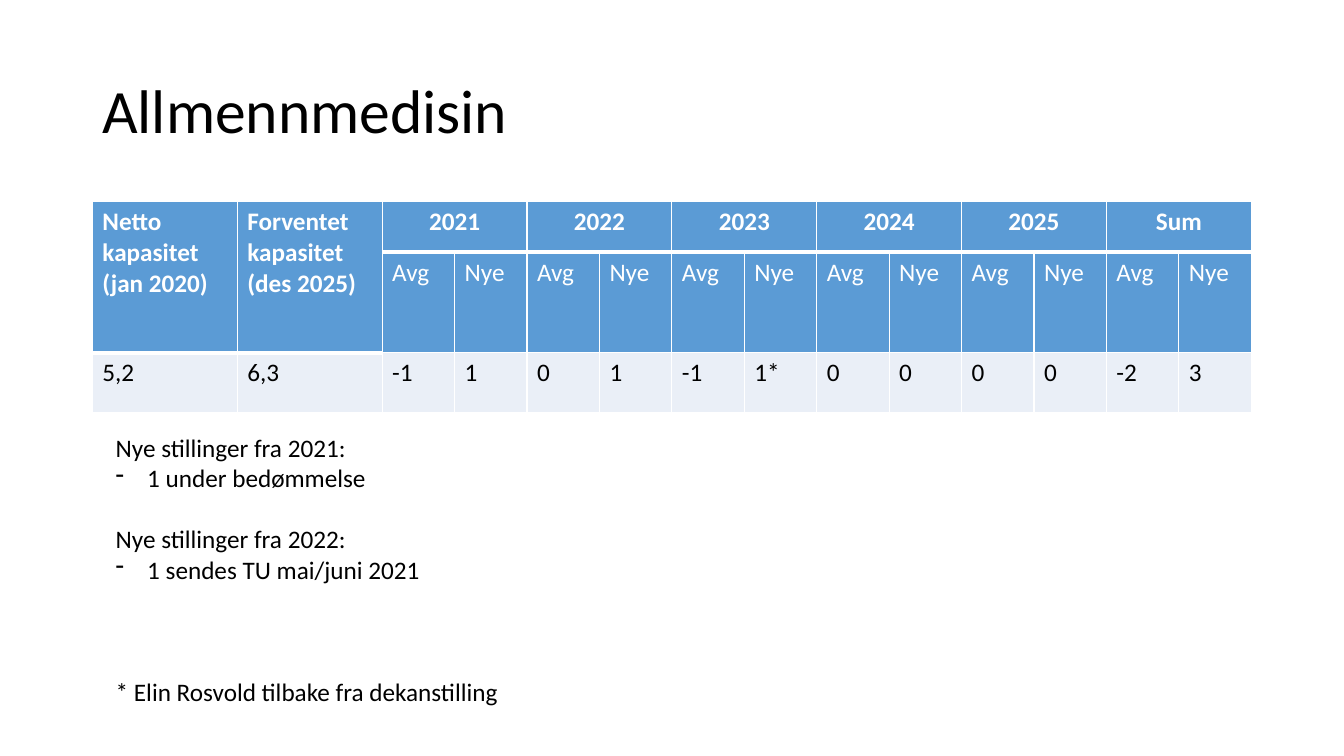
from lxml.etree import SubElement as Sub
from pptx import Presentation
from pptx.dml.color import RGBColor as RGB
from pptx.enum.text import MSO_ANCHOR as Anchor, MSO_AUTO_SIZE as Fit, PP_ALIGN as Align
from pptx.oxml.ns import qn
from pptx.util import Pt

BLUE, PALE, WHITE, BLACK = "5B9BD5", "EAEFF7", "FFFFFF", "000000"
HEADS = ["Netto kapasitet (jan 2020)", "Forventet kapasitet (des 2025)"]
GROUPS = ["2021", "2022", "2023", "2024", "2025", "Sum"]
VALUES = ["5,2", "6,3", "-1", "1", "0", "1", "-1", "1*", "0", "0", "0", "0", "-2", "3"]
NOTES = [
    ("Nye stillinger fra 2021:", 0, False),
    ("1 under bedømmelse", 0, True),
    ("Nye stillinger fra 2022:", 22, False),
    ("1 sendes TU mai/juni 2021", 0, True),
    ("* Elin Rosvold tilbake fra dekanstilling", 66, False),
]


def color(code):
    """Turn a hex string into a colour."""
    return RGB.from_string(code)


def write(para, text, size=18, ink=BLACK, bold=False, align=Align.LEFT, gap=0, line=1.0):
    """Write formatted text into a paragraph."""
    para.alignment = align
    para.space_before = Pt(gap)
    para.line_spacing = line
    run = para.add_run()
    run.text = text
    font = run.font
    font.name, font.size, font.bold = "Calibri", Pt(size), bold
    font.color.rgb = color(ink)


def dash(para):
    """Give a paragraph a hanging dash."""
    props = para._p.get_or_add_pPr()
    props.set("marL", str(Pt(22.5)))
    props.set("indent", str(-Pt(22.5)))
    Sub(props, qn("a:buFontTx"))
    Sub(props, qn("a:buChar"), char="-")


def add_box(slide, left, top, width, height):
    """Add a text box and return its frame."""
    return slide.shapes.add_textbox(Pt(left), Pt(top), Pt(width), Pt(height)).text_frame


def dress(cell, fill, base):
    """Set the borders and fill of a cell."""
    props = cell._tc.get_or_add_tcPr()
    for side, width in (("L", 1), ("R", 1), ("T", 1), ("B", base)):
        edge = Sub(props, qn("a:ln" + side), w=str(Pt(width)))
        paint = Sub(edge, qn("a:solidFill"))
        Sub(paint, qn("a:srgbClr"), val=WHITE)
    cell.fill.solid()
    cell.fill.fore_color.rgb = color(fill)


def add_grid(slide):
    """Add the capacity table."""
    grid = slide.shapes.add_table(3, 14, Pt(66), Pt(144), Pt(828), Pt(128.5)).table
    for index, col in enumerate(grid.columns):
        col.width = Pt(103.5 if index < 2 else 51.75)
    for row, height in zip(grid.rows, (36, 36, 42.5)):
        row.height = Pt(height)
    for r, row in enumerate(grid.rows):
        for c, cell in enumerate(row.cells):
            thick = r == 0 or (r == 1 and c < 2)
            dress(cell, PALE if r == 2 else BLUE, 3 if thick else 1)

    def fill(row, col, text, **form):
        """Write text into one cell."""
        write(grid.cell(row, col).text_frame.paragraphs[0], text, **form)

    for col, text in enumerate(HEADS):
        grid.cell(0, col).merge(grid.cell(1, col))
        fill(0, col, text, ink=WHITE, bold=True)
    for index, text in enumerate(GROUPS):
        col = 2 + 2 * index
        grid.cell(0, col).merge(grid.cell(0, col + 1))
        fill(0, col, text, ink=WHITE, bold=True, align=Align.CENTER)
        fill(1, col, "Avg", ink=WHITE)
        fill(1, col + 1, "Nye", ink=WHITE)
    for col, text in enumerate(VALUES):
        fill(2, col, text)


def add_title(slide):
    """Add the slide title."""
    frame = add_box(slide, 66, 28.75, 828, 104.4)
    frame.word_wrap = True
    frame.vertical_anchor = Anchor.MIDDLE
    write(frame.paragraphs[0], "Allmennmedisin", size=44, line=0.9)


def add_notes(slide):
    """Add the remarks below the table."""
    frame = add_box(slide, 75.6, 305.3, 290.9, 203.8)
    frame.word_wrap = False
    frame.auto_size = Fit.SHAPE_TO_FIT_TEXT
    for index, (text, gap, item) in enumerate(NOTES):
        para = frame.add_paragraph() if index else frame.paragraphs[0]
        write(para, text, gap=gap)
        if item:
            dash(para)


def main():
    """Build and save the slide."""
    deck = Presentation()
    deck.slide_width, deck.slide_height = Pt(960), Pt(540)
    slide = deck.slides.add_slide(deck.slide_layouts[6])
    add_title(slide)
    add_grid(slide)
    add_notes(slide)
    deck.save("out.pptx")


if __name__ == "__main__":
    main()
